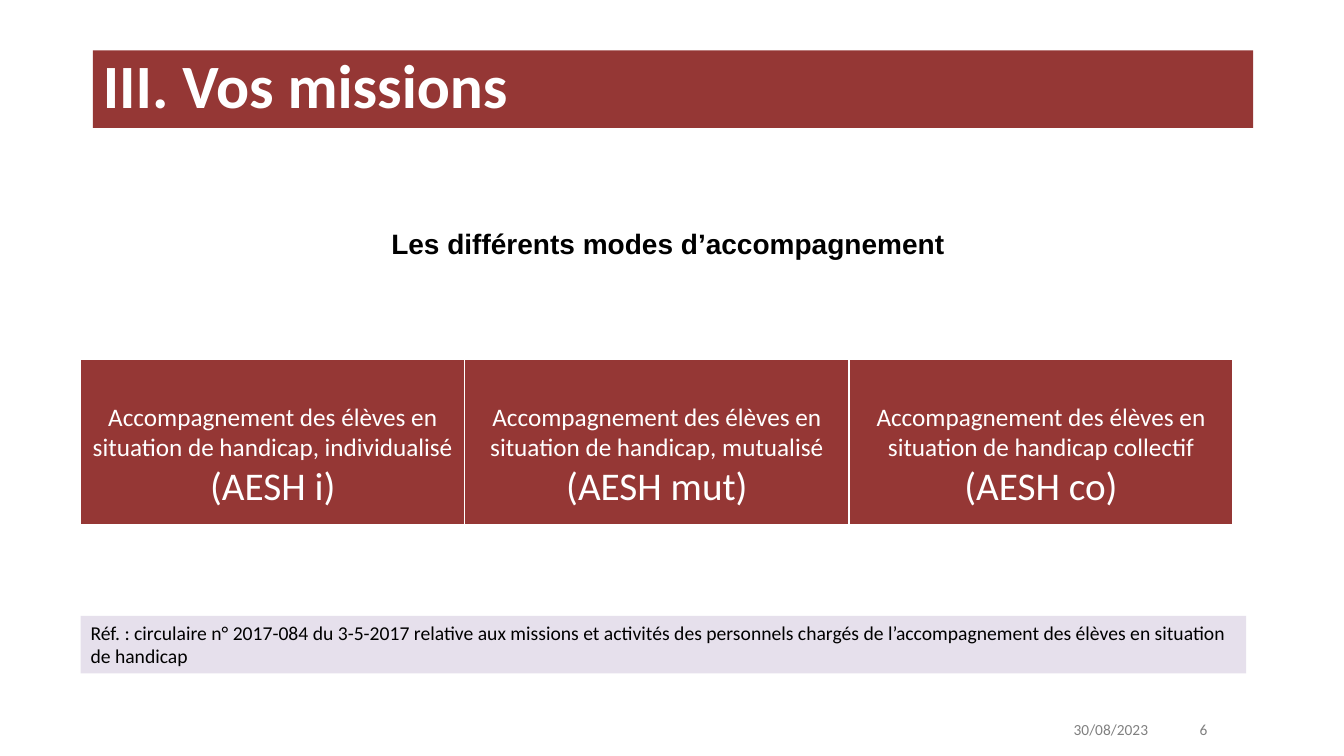
from dataclasses import dataclass

from lxml.etree import SubElement
from pptx import Presentation
from pptx.dml.color import RGBColor
from pptx.enum.shapes import MSO_SHAPE
from pptx.enum.text import MSO_ANCHOR, MSO_AUTO_SIZE, PP_ALIGN
from pptx.oxml.ns import qn
from pptx.util import Emu, Pt

EMU_PER_PX = 9144
COLORS = {
    "red": "953735",
    "lavender": "E6E0EC",
    "white": "FFFFFF",
    "black": "000000",
    "gray": "808080",
}


@dataclass(frozen=True)
class Box:
    left: int
    top: int
    width: int
    height: int


@dataclass(frozen=True)
class Style:
    size: int
    color: str
    font: str = "Calibri"
    bold: bool = False


@dataclass(frozen=True)
class Mode:
    description: str
    code: str


MODES = [
    Mode("Accompagnement des élèves en situation de handicap, individualisé ", "(AESH i)"),
    Mode("Accompagnement des élèves en situation de handicap, mutualisé ", "(AESH mut)"),
    Mode("Accompagnement des élèves en situation de handicap collectif ", "(AESH co)"),
]
BORDERS = {"a:lnL": 1, "a:lnR": 1, "a:lnT": 1, "a:lnB": 3}


def px(length: int) -> Emu:
    return Emu(length * EMU_PER_PX)


def frame(box: Box) -> tuple[Emu, Emu, Emu, Emu]:
    return px(box.left), px(box.top), px(box.width), px(box.height)


def rgb(name: str) -> RGBColor:
    return RGBColor.from_string(COLORS[name])


def fill_with(item, color: str) -> None:
    item.fill.solid()
    item.fill.fore_color.rgb = rgb(color)


def format_run(run, style: Style) -> None:
    run.font.name = style.font
    run.font.size = Pt(style.size)
    run.font.bold = style.bold
    run.font.color.rgb = rgb(style.color)


def write(shape, text: str, style: Style, align=PP_ALIGN.LEFT, anchor=MSO_ANCHOR.TOP):
    text_frame = shape.text_frame
    text_frame.text = text
    text_frame.word_wrap = True
    text_frame.auto_size = MSO_AUTO_SIZE.NONE
    text_frame.vertical_anchor = anchor
    paragraph = text_frame.paragraphs[0]
    paragraph.alignment = align
    for run in paragraph.runs:
        format_run(run, style)
    return paragraph


def add_title(slide) -> None:
    title = slide.shapes.title
    title.left, title.top, title.width, title.height = frame(Box(92, 50, 1151, 77))
    fill_with(title, "red")
    paragraph = write(title, "III. Vos missions", Style(44, "white", bold=True))
    paragraph.line_spacing = 0.9


def add_subtitle(slide) -> None:
    shape = slide.shapes.add_textbox(*frame(Box(313, 217, 634, 47)))
    paragraph = write(shape, "Les différents modes d’accompagnement",
                      Style(20, "black", "Arial", True), PP_ALIGN.RIGHT)
    paragraph.line_spacing = Pt(26)
    paragraph.space_before = Pt(9.4)
    paragraph.space_after = Pt(10.8)


def add_borders(cell) -> None:
    properties = cell._tc.get_or_add_tcPr()
    for tag, points in BORDERS.items():
        line = SubElement(properties, qn(tag), w=str(Pt(points)))
        fill = SubElement(line, qn("a:solidFill"))
        SubElement(fill, qn("a:srgbClr"), val=COLORS["white"])


def fill_cell(cell, mode: Mode) -> None:
    add_borders(cell)
    fill_with(cell, "red")
    cell.margin_top = px(42)
    paragraph = cell.text_frame.paragraphs[0]
    paragraph.text = mode.description
    paragraph.alignment = PP_ALIGN.CENTER
    format_run(paragraph.runs[0], Style(18, "white"))
    code = paragraph.add_run()
    code.text = mode.code
    format_run(code, Style(28, "white"))


def add_modes(slide) -> None:
    box = Box(80, 357, 1143, 165)
    table = slide.shapes.add_table(1, len(MODES), *frame(box)).table
    table.first_row = False
    table.horz_banding = False
    for column, cell, mode in zip(table.columns, table.rows[0].cells, MODES):
        column.width = px(box.width // len(MODES))
        fill_cell(cell, mode)


def add_reference(slide) -> None:
    shape = slide.shapes.add_shape(MSO_SHAPE.RECTANGLE, *frame(Box(80, 611, 1156, 57)))
    shape.shadow.inherit = False
    fill_with(shape, "lavender")
    shape.line.fill.background()
    write(shape, "Réf. : circulaire n° 2017-084 du 3-5-2017 relative aux missions et activités "
          "des personnels chargés de l’accompagnement des élèves en situation de handicap",
          Style(14, "black"))


def add_date_and_number(slide) -> None:
    shape = slide.shapes.add_textbox(*frame(Box(1055, 710, 168, 40)))
    paragraph = write(shape, "30/08/2023\t6", Style(11, "gray"))
    tabs = SubElement(paragraph._p.get_or_add_pPr(), qn("a:tabLst"))
    SubElement(tabs, qn("a:tab"), pos=str(px(125)), algn="l")


def main() -> None:
    presentation = Presentation()
    presentation.slide_width = px(1333)
    presentation.slide_height = px(750)
    slide = presentation.slides.add_slide(presentation.slide_layouts[5])
    add_title(slide)
    add_subtitle(slide)
    add_modes(slide)
    add_reference(slide)
    add_date_and_number(slide)
    presentation.save("out.pptx")


if __name__ == "__main__":
    main()
